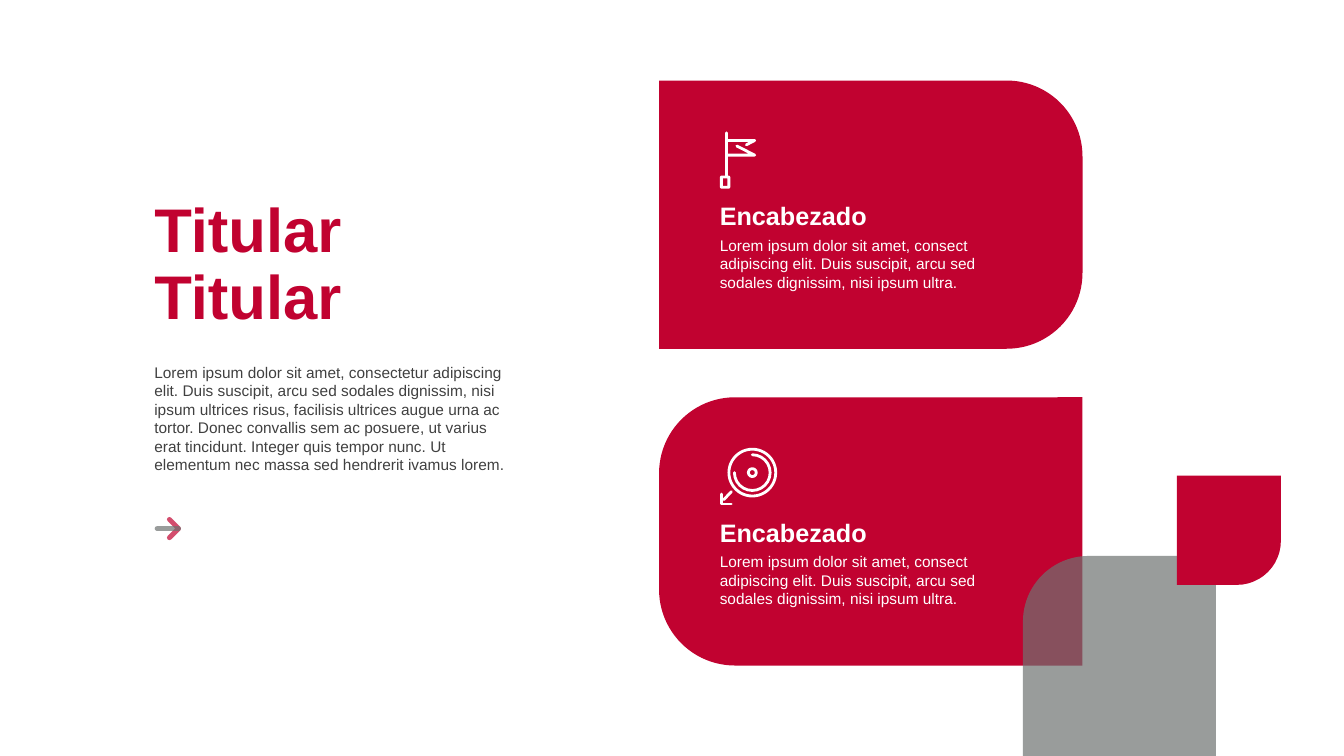
from lxml import etree
from pptx import Presentation
from pptx.dml.color import RGBColor
from pptx.enum.shapes import MSO_CONNECTOR, MSO_SHAPE as Preset
from pptx.enum.text import MSO_ANCHOR as Anchor, MSO_AUTO_SIZE as AutoSize, PP_ALIGN as Align
from pptx.oxml.ns import qn
from pptx.util import Cm, Pt

COLORS = {"red": "C10230", "gray": "6F7271", "text": "404040", "white": "FFFFFF"}
INTRO = (
    "Lorem ipsum dolor sit amet, consectetur adipiscing elit. Duis suscipit, arcu sed "
    "sodales dignissim, nisi ipsum ultrices risus, facilisis ultrices augue urna ac tortor. "
    "Donec convallis sem ac posuere, ut varius erat tincidunt. Integer quis tempor nunc. "
    "Ut elementum nec massa sed hendrerit ivamus lorem."
)
CARD_BODY = (
    "Lorem ipsum dolor sit amet, consect adipiscing elit. Duis suscipit, arcu sed "
    "sodales dignissim, nisi ipsum ultra."
)


def color(name):
    return RGBColor.from_string(COLORS[name])


def set_opacity(shape, percent):
    for srgb in shape.element.spPr.iter(qn("a:srgbClr")):
        etree.SubElement(srgb, qn("a:alpha")).set("val", str(percent * 1000))


def filled(slide, preset, box, fill, adjustments, opacity=100, flip=None, rotation=0):
    shape = slide.shapes.add_shape(preset, *map(Cm, box))
    for index, value in enumerate(adjustments):
        shape.adjustments[index] = value
    shape.fill.solid()
    shape.fill.fore_color.rgb = color(fill)
    shape.line.fill.background()
    shape.shadow.inherit = False
    shape.rotation = rotation
    if flip:
        shape.element.spPr.find(qn("a:xfrm")).set(flip, "1")
    if opacity < 100:
        set_opacity(shape, opacity)


def style_stroke(shape, stroke, width):
    shape.line.color.rgb = color(stroke)
    shape.line.width = Pt(width)
    ln = shape.element.spPr.find(qn("a:ln"))
    ln.set("cap", "rnd")
    etree.SubElement(ln, qn("a:round"))


def outline(slide, preset, box, adjustments=()):
    shape = slide.shapes.add_shape(preset, *map(Cm, box))
    for index, value in enumerate(adjustments):
        shape.adjustments[index] = value
    shape.fill.background()
    style_stroke(shape, "white", 2)
    shape.shadow.inherit = False


def segment(slide, x1, y1, x2, y2):
    line = slide.shapes.add_connector(MSO_CONNECTOR.STRAIGHT, *map(Cm, (x1, y1, x2, y2)))
    style_stroke(line, "white", 2)
    etree.SubElement(line.element.spPr, qn("a:effectLst"))


def polyline(slide, left, top, points, stroke="white", width=2):
    corners = [(Cm(left + x), Cm(top + y)) for x, y in points]
    builder = slide.shapes.build_freeform(*corners[0])
    builder.add_line_segments(corners[1:], close=False)
    shape = builder.convert_to_shape()
    shape.fill.background()
    style_stroke(shape, stroke, width)
    shape.shadow.inherit = False
    return shape


def write(holder, box, lines, size, ink, bold=False, anchor=Anchor.TOP, spacing=1.0):
    holder.left, holder.top, holder.width, holder.height = map(Cm, box)
    frame = holder.text_frame
    frame.margin_left = frame.margin_top = frame.margin_right = frame.margin_bottom = 0
    frame.word_wrap = True
    frame.auto_size = AutoSize.NONE
    frame.vertical_anchor = anchor
    frame.text = "\n".join(lines)
    for paragraph in frame.paragraphs:
        paragraph.alignment = Align.LEFT
        paragraph.line_spacing = spacing
        paragraph.font.name = "Arial"
        paragraph.font.size = Pt(size)
        paragraph.font.bold = bold
        paragraph.font.color.rgb = color(ink)


def write_new(slide, box, *args, **options):
    write(slide.shapes.add_textbox(*map(Cm, box)), box, *args, **options)


def draw_intro(slide, left, top, width):
    write(slide.shapes.title, (left, top, width, 3.43), ["Titular", "Titular"], 44, "red",
          bold=True, anchor=Anchor.BOTTOM, spacing=0.9)
    write_new(slide, (left, top + 4.19, width, 2.87), [INTRO], 11, "text")
    arrow_y = top + 8.37
    head = polyline(slide, left + 0.38, arrow_y, [(0, -0.23), (0.23, 0), (0, 0.23)], "red", 3.5)
    set_opacity(head, 70)
    filled(slide, Preset.ROUNDED_RECTANGLE, (left + 0.01, arrow_y - 0.06, 0.66, 0.12), "gray",
           [0.5], opacity=70)


def draw_flag(slide, left, top):
    polyline(slide, left, top, [(0.17, 0.6), (0.88, 0.6), (0.43, 0.37)])
    polyline(slide, left, top, [(0.17, 0.23), (0.88, 0.23), (0.67, 0.34)])
    segment(slide, left + 0.17, top + 0.04, left + 0.17, top + 1.13)
    outline(slide, Preset.ROUNDED_RECTANGLE, (left + 0.04, top + 1.15, 0.19, 0.26), [0.05])


def draw_disc(slide, left, top):
    def ring(radius):
        return left + 0.82 - radius, top + 0.62 - radius, 2 * radius, 2 * radius

    outline(slide, Preset.OVAL, ring(0.59))
    outline(slide, Preset.ARC, ring(0.45), [270 * 0.6, 180 * 0.6])
    outline(slide, Preset.OVAL, ring(0.1))
    polyline(slide, left, top, [(0.04, 1.16), (0.04, 1.41), (0.29, 1.41)])
    segment(slide, left + 0.29, top + 1.1, left + 0.1, top + 1.3)


def draw_card(slide, left, top, width, height, rotation, draw_icon):
    unrotated = (left + (width - height) / 2, top + (height - width) / 2, height, width)
    filled(slide, Preset.ROUND_2_SAME_RECTANGLE, unrotated, "red", [0.283, 0], rotation=rotation)
    text_left = left + 1.53
    write_new(slide, (text_left, top + 3, 6.5, 0.79), ["Encabezado"], 18, "white",
              bold=True, anchor=Anchor.BOTTOM, spacing=0.9)
    write_new(slide, (text_left, top + 3.91, 6.5, 1.42), [CARD_BODY], 11, "white")
    draw_icon(slide, text_left, top + 1.28)


def draw_corner(slide, left, top):
    filled(slide, Preset.ROUND_1_RECTANGLE, (left, top + 2.02, 4.86, 5.04), "gray",
           [0.34], opacity=70, flip="flipH")
    filled(slide, Preset.ROUND_1_RECTANGLE, (left + 3.88, top, 2.62, 2.75), "red",
           [0.424], flip="flipV")


def main():
    deck = Presentation()
    deck.slide_width, deck.slide_height = Cm(33.87), Cm(19.05)
    slide = deck.slides.add_slide(deck.slide_layouts[5])
    draw_intro(slide, 3.89, 4.95, 9.04)
    for row, (rotation, draw_icon) in enumerate([(90, draw_flag), (270, draw_disc)]):
        draw_card(slide, 16.61, 2.03 + row * 7.98, 10.67, 6.76, rotation, draw_icon)
    draw_corner(slide, 25.78, 11.99)
    deck.save("out.pptx")


if __name__ == "__main__":
    main()
